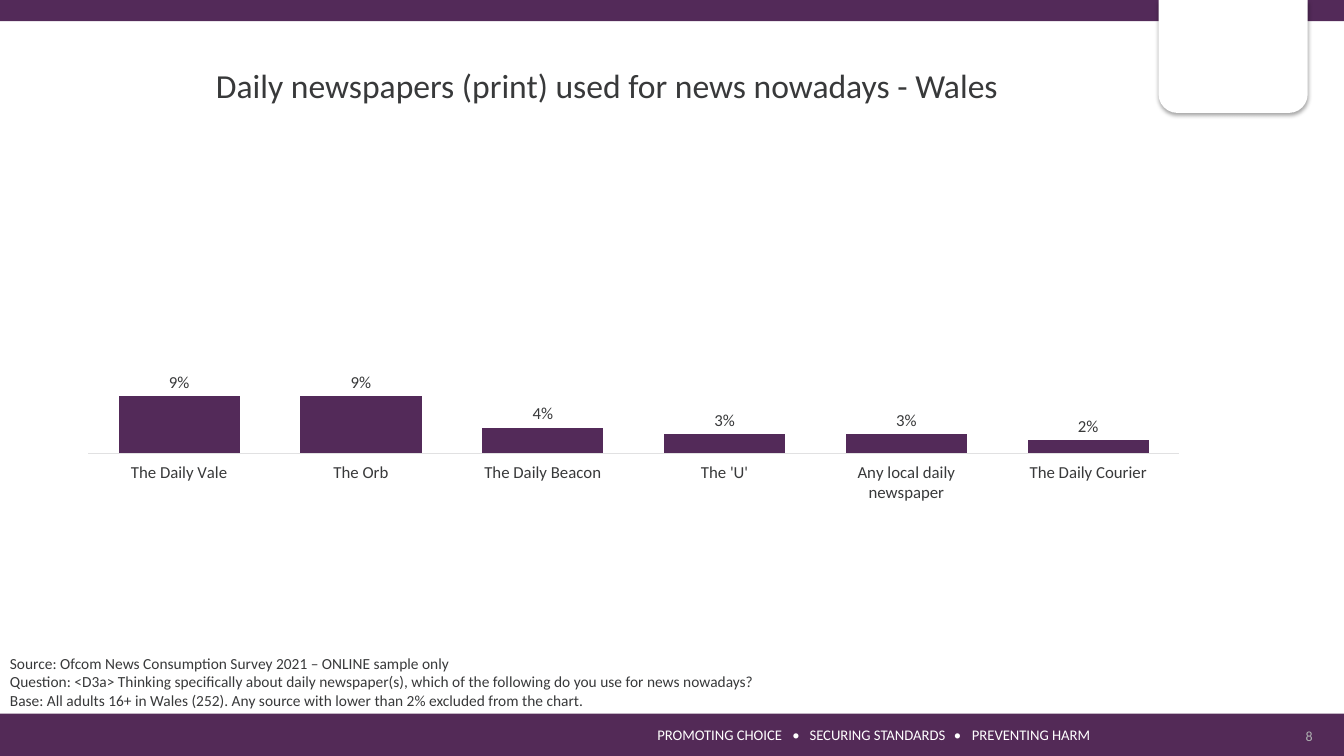
from dataclasses import dataclass

from lxml.etree import SubElement
from pptx import Presentation
from pptx.chart.data import CategoryChartData
from pptx.dml.color import RGBColor
from pptx.enum.chart import XL_CHART_TYPE, XL_LABEL_POSITION, XL_TICK_LABEL_POSITION, XL_TICK_MARK
from pptx.enum.shapes import MSO_SHAPE
from pptx.enum.text import MSO_ANCHOR, MSO_AUTO_SIZE, PP_ALIGN
from pptx.oxml import parse_xml
from pptx.oxml.ns import nsdecls, qn
from pptx.util import Inches, Pt


@dataclass(frozen=True)
class Theme:
    font: str = "Calibri"
    footer_band: str = "532A57"
    purple: str = "532A59"
    text: str = "38393A"
    white: str = "FFFFFF"
    page_number: str = "AEB0B1"
    axis_line: str = "E1E1E2"
    title_size: float = 24
    chart_size: float = 12
    source_size: float = 11
    motto_size: float = 10.5
    page_number_size: float = 10


THEME = Theme()

NEWSPAPER_USE = {
    "The Daily Vale": 0.09,
    "The Orb": 0.09,
    "The Daily Beacon": 0.04,
    "The 'U'": 0.03,
    "Any local daily newspaper": 0.03,
    "The Daily Courier": 0.02,
}

SOURCE_LINES = [
    "Source: Ofcom News Consumption Survey 2021 – ONLINE sample only",
    "Question: <D3a> Thinking specifically about daily newspaper(s), "
    "which of the following do you use for news nowadays?",
    "Base: All adults 16+ in Wales (252). Any source with lower than 2% excluded from the chart.",
]

MOTTO = "PROMOTING CHOICE\t•\tSECURING STANDARDS\t•\tPREVENTING HARM"
MOTTO_TABS = [1.34, 1.51, 2.94, 3.12]


def style_font(font, size, color):
    font.name = THEME.font
    font.size = Pt(size)
    font.color.rgb = RGBColor.from_string(color)


def fill_text(text_frame, lines, size, color, alignment=PP_ALIGN.LEFT):
    text_frame.word_wrap = True
    text_frame.auto_size = MSO_AUTO_SIZE.NONE
    text_frame.text = "\n".join(lines)
    for paragraph in text_frame.paragraphs:
        paragraph.alignment = alignment
        for run in paragraph.runs:
            style_font(run.font, size, color)


def add_block(slide, kind, box, color):
    shape = slide.shapes.add_shape(kind, *map(Inches, box))
    shape.shadow.inherit = False
    shape.fill.solid()
    shape.fill.fore_color.rgb = RGBColor.from_string(color)
    shape.line.fill.background()
    return shape


def add_logo_tab(slide):
    tab = add_block(slide, MSO_SHAPE.ROUND_2_SAME_RECTANGLE, (11.49, 0, 1.48, 1.12), THEME.white)
    tab.rotation = 180
    effects = tab._element.spPr.find(qn("a:effectLst"))
    shadow = SubElement(effects, qn("a:outerShdw"), blurRad=str(Pt(3.1)), dist=str(Pt(1.8)),
                        dir="5400000", rotWithShape="0")
    color = SubElement(shadow, qn("a:srgbClr"), val="000000")
    SubElement(color, qn("a:alpha"), val="35000")


def add_text(slide, box, lines, size, color, alignment=PP_ALIGN.LEFT, left=0.1, right=0.1):
    text_frame = slide.shapes.add_textbox(*map(Inches, box)).text_frame
    text_frame.margin_left = Inches(left)
    text_frame.margin_right = Inches(right)
    fill_text(text_frame, lines, size, color, alignment)
    return text_frame


def add_tab_stops(paragraph, positions):
    tab_list = SubElement(paragraph._p.get_or_add_pPr(), qn("a:tabLst"))
    for position in positions:
        SubElement(tab_list, qn("a:tab"), pos=str(Inches(position)), algn="l")


def set_title(slide, text):
    title = slide.shapes.title
    title.left, title.top, title.width, title.height = map(Inches, (0.51, 0.59, 11.02, 0.5))
    title.text_frame.vertical_anchor = MSO_ANCHOR.MIDDLE
    fill_text(title.text_frame, [text], THEME.title_size, THEME.text, PP_ALIGN.CENTER)


def set_plot_layout(chart, x, y, width, height):
    layout = parse_xml(
        f'<c:layout {nsdecls("c")}><c:manualLayout><c:layoutTarget val="inner"/>'
        '<c:xMode val="edge"/><c:yMode val="edge"/>'
        f'<c:x val="{x}"/><c:y val="{y}"/><c:w val="{width}"/><c:h val="{height}"/>'
        '</c:manualLayout></c:layout>')
    plot_area = chart._chartSpace.chart.plotArea
    for existing in plot_area.findall(qn("c:layout")):
        plot_area.remove(existing)
    plot_area.insert(0, layout)


def clear_chart_background(chart):
    chart._chartSpace.chart.addnext(parse_xml(
        f'<c:spPr {nsdecls("c", "a")}><a:noFill/><a:ln><a:noFill/></a:ln></c:spPr>'))


def add_column_chart(slide, box, values):
    data = CategoryChartData(number_format="0%")
    data.categories = list(values)
    data.add_series("Series 1", list(values.values()))
    chart = slide.shapes.add_chart(XL_CHART_TYPE.COLUMN_CLUSTERED, *map(Inches, box), data).chart
    chart.has_title = False
    chart.has_legend = False
    style_font(chart.font, THEME.chart_size, THEME.text)
    clear_chart_background(chart)
    set_plot_layout(chart, 0.02, 0, 0.96, 0.83)

    value_axis = chart.value_axis
    value_axis.minimum_scale = 0
    value_axis.maximum_scale = 0.7
    value_axis.has_major_gridlines = False
    value_axis.visible = False

    category_axis = chart.category_axis
    category_axis.major_tick_mark = XL_TICK_MARK.NONE
    category_axis.tick_label_position = XL_TICK_LABEL_POSITION.LOW
    category_axis.format.line.color.rgb = RGBColor.from_string(THEME.axis_line)
    category_axis.format.line.width = Pt(0.75)
    style_font(category_axis.tick_labels.font, THEME.chart_size, THEME.text)

    plot = chart.plots[0]
    plot.gap_width = 50
    plot.vary_by_categories = False
    fill = plot.series[0].format.fill
    fill.solid()
    fill.fore_color.rgb = RGBColor.from_string(THEME.purple)

    labels = plot.series[0].data_labels
    labels.show_value = True
    labels.position = XL_LABEL_POSITION.OUTSIDE_END
    labels.number_format = "0%"
    labels.number_format_is_linked = False
    style_font(labels.font, THEME.chart_size, THEME.text)


def main():
    presentation = Presentation()
    presentation.slide_width = Inches(13.33)
    presentation.slide_height = Inches(7.5)
    slide = presentation.slides.add_slide(presentation.slide_layouts[5])

    add_block(slide, MSO_SHAPE.RECTANGLE, (0, 7.08, 13.33, 0.44), THEME.footer_band)
    add_block(slide, MSO_SHAPE.RECTANGLE, (0, 0, 13.33, 0.21), THEME.purple)
    motto = add_text(slide, (6.52, 7.15, 4.5, 0.28), [MOTTO], THEME.motto_size, THEME.white, left=0)
    add_tab_stops(motto.paragraphs[0], MOTTO_TABS)
    add_logo_tab(slide)
    page_number = add_text(slide, (11.52, 7.15, 1.5, 0.3), ["8"], THEME.page_number_size,
                           THEME.page_number, PP_ALIGN.RIGHT, right=0)
    page_number.vertical_anchor = MSO_ANCHOR.MIDDLE

    set_title(slide, "Daily newspapers (print) used for news nowadays - Wales")
    add_column_chart(slide, (0.65, 0.13, 11.27, 5.26), NEWSPAPER_USE)
    add_text(slide, (0, 6.44, 8.59, 0.66), SOURCE_LINES, THEME.source_size, THEME.text)

    presentation.save("out.pptx")


if __name__ == "__main__":
    main()
